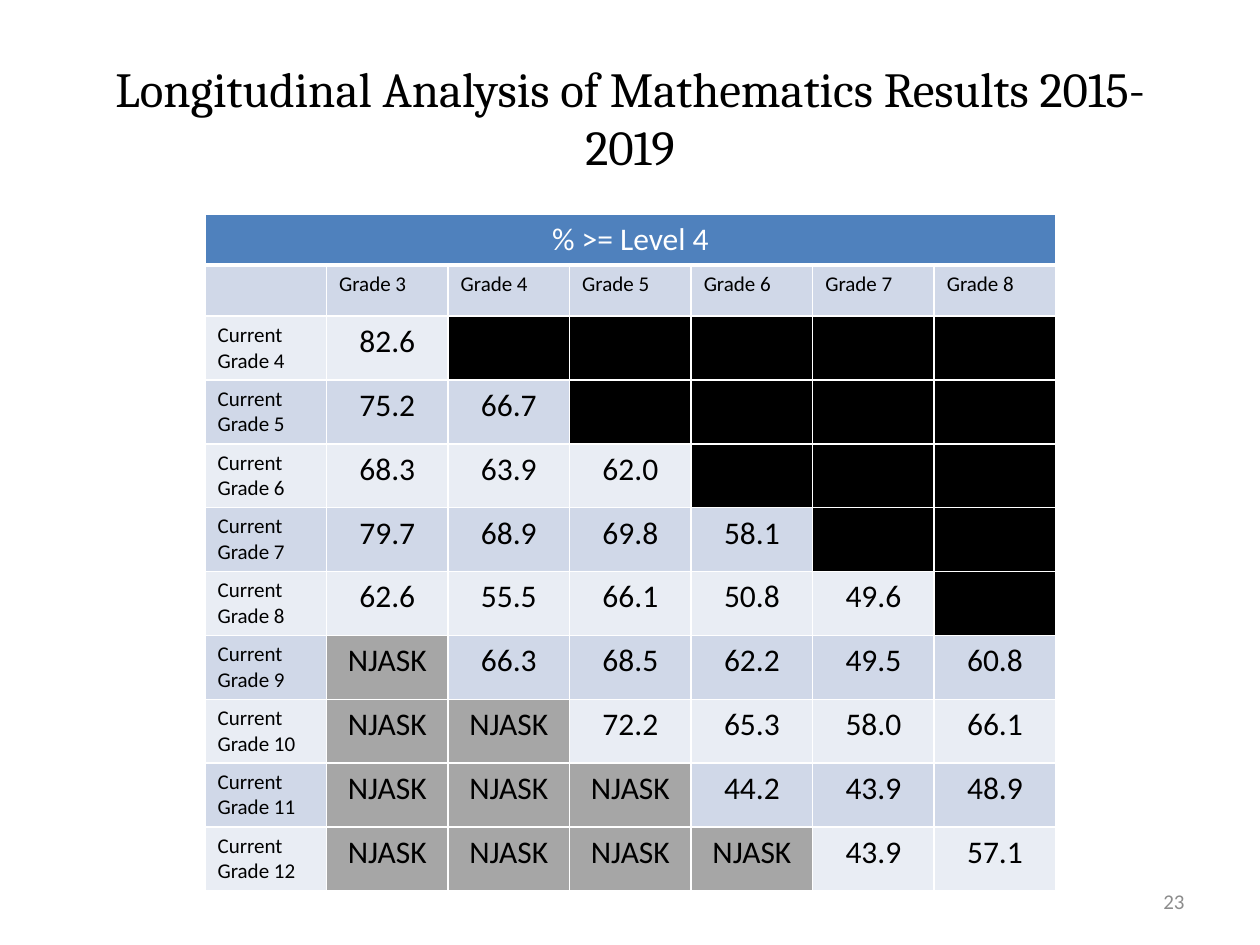
import pptx
import pptx.util
import pptx.dml.color
import pptx.enum.text
import pptx.oxml
import pptx.oxml.ns

SCALE = 914400 / 126
ALIGN = pptx.enum.text.PP_ALIGN
ANCHOR = pptx.enum.text.MSO_ANCHOR


def px(n):
    return pptx.util.Emu(round(n * SCALE))


def add_text(tf, text, size, color, font="Calibri", align=ALIGN.LEFT):
    p = tf.paragraphs[0]
    p.alignment = align
    r = p.add_run()
    r.text = text
    r.font.size = pptx.util.Pt(size)
    r.font.name = font
    r.font.color.rgb = pptx.dml.color.RGBColor.from_string(color)


prs = pptx.Presentation()
prs.slide_width = px(1260)
prs.slide_height = px(945)
s = prs.slides.add_slide(prs.slide_layouts[5])

title = s.shapes.title
title.left, title.top, title.width, title.height = px(63), px(38), px(1134), px(158)
title.text_frame.vertical_anchor = ANCHOR.MIDDLE
add_text(title.text_frame, "Longitudinal Analysis of Mathematics Results 2015-2019",
         28, "000000", "Cambria", ALIGN.CENTER)

results = [
    ["82.6"],
    ["75.2", "66.7"],
    ["68.3", "63.9", "62.0"],
    ["79.7", "68.9", "69.8", "58.1"],
    ["62.6", "55.5", "66.1", "50.8", "49.6"],
    ["NJASK", "66.3", "68.5", "62.2", "49.5", "60.8"],
    ["NJASK", "NJASK", "72.2", "65.3", "58.0", "66.1"],
    ["NJASK", "NJASK", "NJASK", "44.2", "43.9", "48.9"],
    ["NJASK", "NJASK", "NJASK", "NJASK", "43.9", "57.1"],
]
rows = [["% >= Level 4"] + [""] * 6]
rows.append([""] + [f"Grade {g}" for g in range(3, 9)])
for grade, values in enumerate(results, 4):
    rows.append([f"Current Grade {grade}"] + values + [""] * (6 - len(values)))

gf = s.shapes.add_table(len(rows), 7, px(205), px(214), px(851), px(669))
table = gf.table
for col in table.columns:
    col.width = px(851 / 7)
for row in table.rows:
    row.height = px(51)
gf.height = px(669)
table.cell(0, 0).merge(table.cell(0, 6))

for i, row in enumerate(rows):
    for j, text in enumerate(row):
        cell = table.cell(i, j)
        tcPr = cell._tc.get_or_add_tcPr()
        for side in "LRTB":
            width = 38100 if i == 0 and side == "B" else 12700
            tcPr.append(pptx.oxml.parse_xml(
                f'<a:ln{side} {pptx.oxml.ns.nsdecls("a")} w="{width}">'
                f'<a:solidFill><a:srgbClr val="FFFFFF"/></a:solidFill></a:ln{side}>'))
        fill = "D0D8E8" if i % 2 else "E9EDF4"
        if i == 0:
            fill = "4F81BD"
        elif text == "NJASK":
            fill = "A6A6A6"
        elif i > 1 and not text:
            fill = "000000"
        cell.fill.solid()
        cell.fill.fore_color.rgb = pptx.dml.color.RGBColor.from_string(fill)
        if text:
            label = i == 1 or (i > 1 and j == 0)
            add_text(cell.text_frame, text, 12 if label else 18,
                     "FFFFFF" if i == 0 else "000000",
                     align=ALIGN.LEFT if label else ALIGN.CENTER)

sp = s.shapes.add_textbox(px(903), px(876), px(294), px(50))
tf = sp.text_frame
tf.word_wrap = True
tf.vertical_anchor = ANCHOR.MIDDLE
add_text(tf, "23", 12, "8C8C8C", align=ALIGN.RIGHT)

prs.save("out.pptx")
